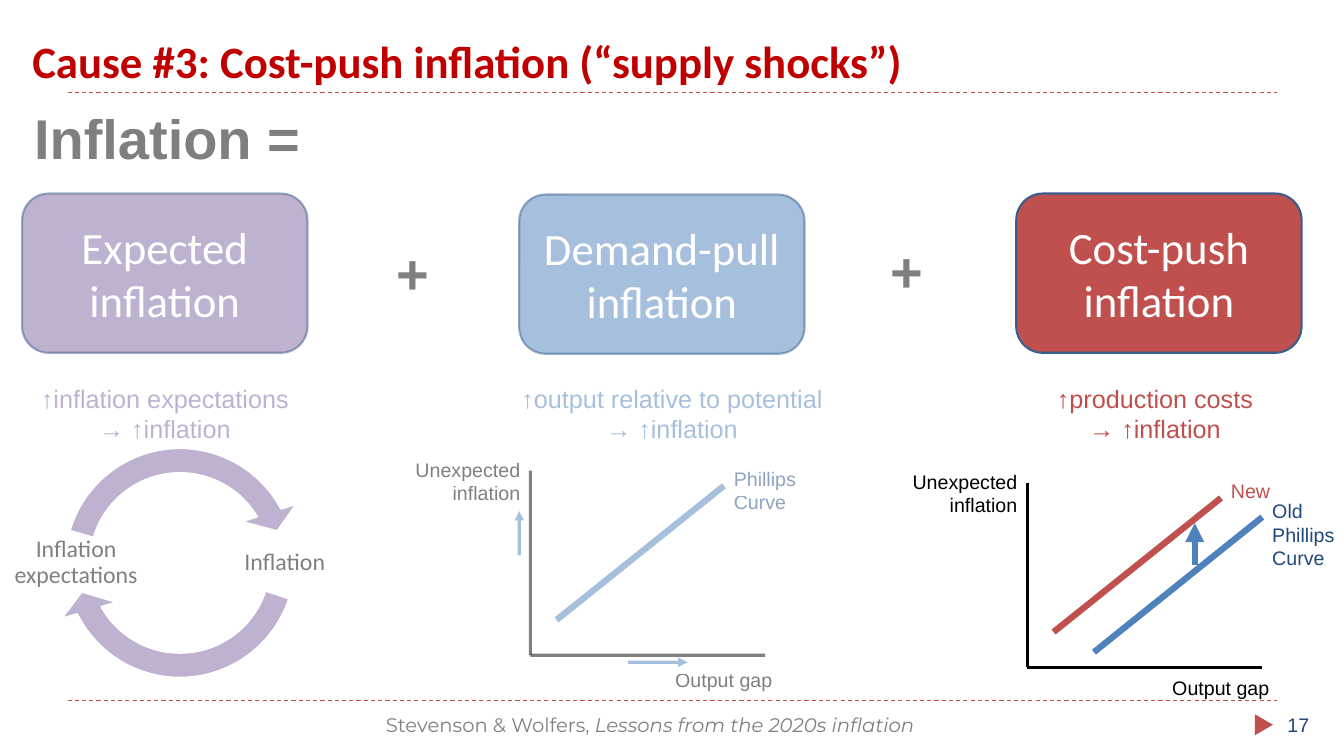
import pptx
import pptx.util
import pptx.dml.color
import pptx.enum.dml
import pptx.enum.shapes
import pptx.enum.text
import pptx.oxml.ns
import lxml.etree

PX = 9144  # EMU; 100 px to the inch
INK = {
    "red": "C0504D", "title": "C00000", "blue": "4F81BD", "navy": "1F497D",
    "edge": "3A5F8C", "violet": "8064A2", "black": "000000",
    "gray": "808080", "white": "FFFFFF",
}
KIND = pptx.enum.shapes.MSO_SHAPE
ALIGN = pptx.enum.text.PP_ALIGN
ANCHOR = pptx.enum.text.MSO_ANCHOR
FIT = pptx.enum.text.MSO_AUTO_SIZE
DASH = pptx.enum.dml.MSO_LINE.DASH


def px(*nums):
    return [pptx.util.Emu(num * PX) for num in nums]


def rgb(name):
    return pptx.dml.color.RGBColor.from_string(INK[name])


def put(item, vals):
    for name, val in vals.items():
        setattr(item, name, val)


def fade(node):
    """Make every colour under the node half transparent."""
    for tint in node.iter(pptx.oxml.ns.qn("a:srgbClr")):
        lxml.etree.SubElement(tint, pptx.oxml.ns.qn("a:alpha"), val="50000")


def style(part, size, ink, face="Arial", pale=False, **more):
    put(part.font, {"size": pptx.util.Pt(size), "name": face, **more})
    part.font.color.rgb = rgb(ink)
    if pale:
        fade(part.font.fill._xPr)


def write(frame, text, size, ink, align=ALIGN.LEFT, **look):
    line = frame.paragraphs[0]
    line.text = text
    line.alignment = align
    for part in line.runs:
        style(part, size, ink, **look)
    return line


def label(slide, box, text, size, ink, align=ALIGN.LEFT, **look):
    frame = slide.shapes.add_textbox(*px(*box)).text_frame
    put(frame, {"word_wrap": True, "auto_size": FIT.NONE})
    return write(frame, text, size, ink, align, **look)


def stroke(slide, ends, ink, width, pale=False, dash=None, arrow=False):
    line = slide.shapes.add_connector(
        pptx.enum.shapes.MSO_CONNECTOR.STRAIGHT, *px(*ends))
    line.line.color.rgb = rgb(ink)
    line.line.width = pptx.util.Pt(width)
    if dash:
        line.line.dash_style = dash
    props = line._element.spPr
    if arrow:
        lxml.etree.SubElement(line.line._get_or_add_ln(),
                              pptx.oxml.ns.qn("a:tailEnd"), type="triangle")
    lxml.etree.SubElement(props, pptx.oxml.ns.qn("a:effectLst"))
    if pale:
        fade(props)


def solid(slide, kind, box, fill, edge=None, pale=False):
    shape = slide.shapes.add_shape(kind, *px(*box))
    shape.shadow.inherit = False
    shape.fill.solid()
    shape.fill.fore_color.rgb = rgb(fill)
    if pale:
        fade(shape._element.spPr)
    if edge:
        shape.line.color.rgb = rgb(edge)
        shape.line.width = pptx.util.Pt(1.5)
        if pale and edge != "white":
            fade(shape.line._get_or_add_ln())
    else:
        shape.line.fill.background()
    return shape


def card(slide, x, y, text, fill, pale):
    shape = solid(slide, KIND.ROUNDED_RECTANGLE, (x, y, 283, 158),
                  fill, "edge", pale)
    put(shape.text_frame, {"word_wrap": True, "vertical_anchor": ANCHOR.MIDDLE})
    write(shape.text_frame, text, 32, "white", ALIGN.CENTER, face="Calibri")


def graph(slide, x, y, ink, name, hue, drop, pale):
    """Draw axes from the origin (x, y), one curve and the labels."""
    stroke(slide, (x, y - 183, x, y), "black", 2.25, pale)
    stroke(slide, (x, y, x + 233, y), "black", 2.25, pale)
    stroke(slide, (x + 26, y - 35, x + 192, y - 168), ink, 4.5, pale)
    label(slide, (x - 167, y - 201, 167, 57), "Unexpected inflation",
          14, "black", ALIGN.RIGHT, pale=pale)
    label(slide, (x + 83, y + drop, 167, 34), "Output gap",
          14, "black", ALIGN.RIGHT, pale=pale)
    label(slide, (x + 192, y - 192, 107, 57), name, 14, hue, pale=pale)


def cycle(slide):
    for stop, start in ((91.386, 10.817), (198.335, 117.766)):
        arc = solid(slide, KIND.CIRCULAR_ARROW, (48, 428, 261, 261),
                    "violet", "white", True)
        for i, val in enumerate((0.095, 6.848, stop, start, 0.111)):
            arc.adjustments[i] = val
    for box, text in (((219, 526, 127, 64), "Inflation"),
                      ((12, 529, 127, 58), "Inflation expectations")):
        frame = slide.shapes.add_textbox(*px(*box)).text_frame
        put(frame, {"word_wrap": True, "vertical_anchor": ANCHOR.MIDDLE})
        for side in ("left", "right", "top", "bottom"):
            setattr(frame, "margin_" + side, px(2)[0])
        line = write(frame, text, 17, "black", ALIGN.CENTER,
                     face="Calibri", pale=True)
        line.line_spacing = 0.9


def frame_page(slide):
    for y in (695, 92):
        stroke(slide, (67, y, 1267, y), "red", 0.75, dash=DASH)
    mark = solid(slide, KIND.ISOSCELES_TRIANGLE, (1243, 710, 21, 18), "red")
    mark.rotation = 90
    title = slide.shapes.title
    put(title, dict(zip(("left", "top", "width", "height"),
                        px(22, 17, 1289, 75))))
    put(title.text_frame, {"vertical_anchor": ANCHOR.BOTTOM,
                           "word_wrap": True, "auto_size": FIT.NONE})
    write(title.text_frame, "Cause #3: Cost-push inflation (“supply shocks”)",
          32, "title", face="Calibri", bold=True)
    foot = label(slide, (67, 702, 1156, 40), "Stevenson & Wolfers, ",
                 14, "gray", ALIGN.CENTER, face="Montserrat")
    book = foot.add_run()
    book.text = "Lessons from the 2020s inflation"
    style(book, 14, "gray", "Montserrat", italic=True)
    label(slide, (1267, 702, 67, 40), "17", 14, "navy")


def main():
    deck = pptx.Presentation()
    deck.slide_width, deck.slide_height = px(1333, 750)
    slide = deck.slides.add_slide(deck.slide_layouts[5])
    frame_page(slide)

    label(slide, (24, 98, 1268, 77), "Inflation =", 40, "black",
          pale=True, bold=True)
    for x, y in ((342, 232), (832, 230)):
        label(slide, (x, y, 134, 77), "+", 40, "black", ALIGN.CENTER,
              pale=True, bold=True)

    causes = (
        ("Expected inflation", 192, "violet", True, 22, 283,
         "↑inflation expectations → ↑inflation"),
        ("Demand-pull inflation", 193, "blue", True, 500, 333,
         "↑output relative to potential → ↑inflation"),
        ("Cost-push inflation", 192, "red", False, 979, 333,
         "↑production costs\v→ ↑inflation"),
    )
    for i, (name, y, ink, pale, left, width, note) in enumerate(causes):
        card(slide, 22 + 493 * i, y, name, ink, pale)
        label(slide, (left, 375, width, 71), note, 18, ink,
              ALIGN.CENTER, pale=pale)

    cycle(slide)
    graph(slide, 526, 650, "blue", "Phillips Curve", "navy", 8, True)
    for ends in ((623, 657, 682, 657), (515, 551, 515, 507)):
        stroke(slide, ends, "blue", 2.25, True, arrow=True)

    graph(slide, 1019, 662, "red", "New", "red", 4, False)
    stroke(slide, (1085, 647, 1252, 513), "blue", 4.5)
    label(slide, (1252, 490, 107, 81), "Old Phillips Curve", 14, "navy")
    stroke(slide, (1185, 561, 1185, 519), "blue", 4.5, arrow=True)
    deck.save("out.pptx")


if __name__ == "__main__":
    main()
